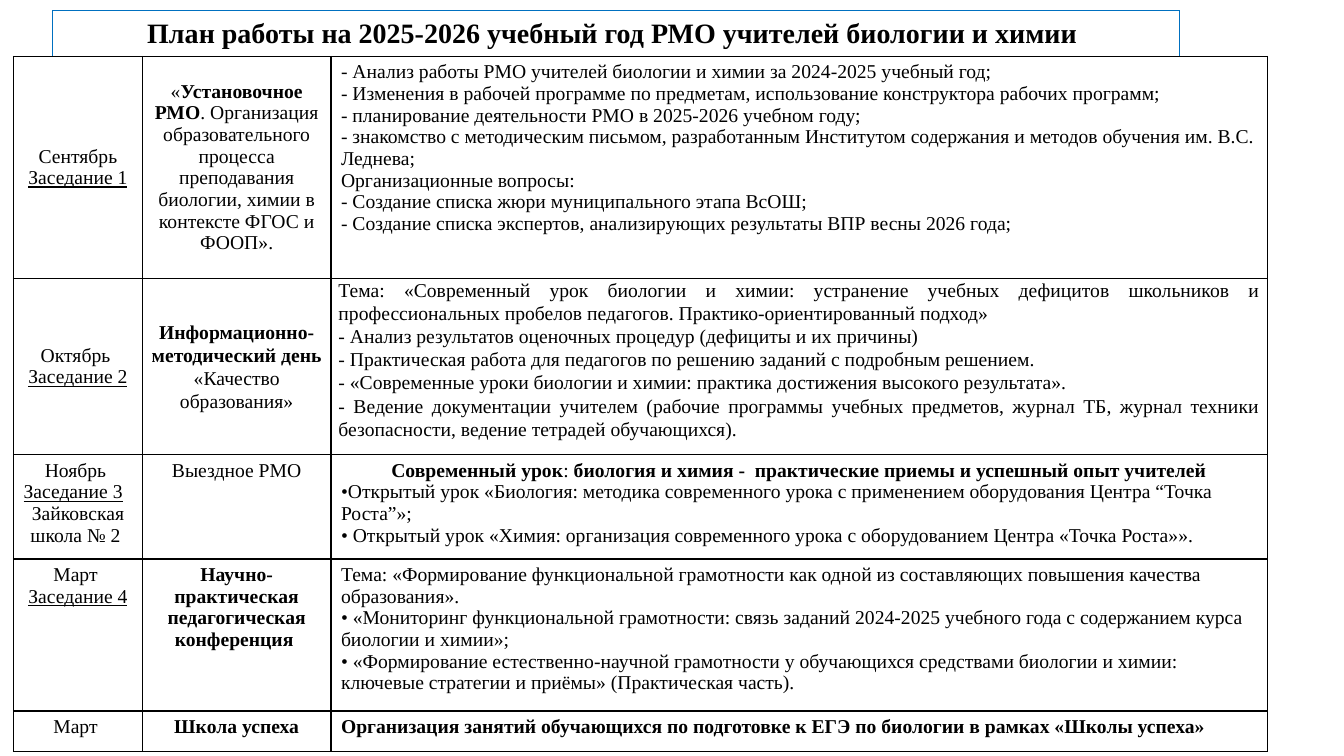
from dataclasses import dataclass

from lxml.etree import SubElement
from pptx import Presentation
from pptx.dml.color import RGBColor
from pptx.enum.text import MSO_ANCHOR as Anchor, MSO_AUTO_SIZE as AutoSize, PP_ALIGN as Align
from pptx.oxml.ns import qn
from pptx.util import Cm, Pt

FONT = "Times New Roman"
BLACK, WHITE, BLUE = "000000", "FFFFFF", "0070C0"
COLUMN_WIDTHS = (3.25, 4.75, 23.6)
ROW_HEIGHTS = (5.59, 4.45, 2.62, 3.83, 1.02)


@dataclass
class Run:
    text: str
    bold: bool = False
    underline: bool = False


@dataclass
class Line:
    runs: list[Run]
    align: Align = Align.LEFT


@dataclass
class Entry:
    lines: list[Line]
    anchor: Anchor = Anchor.TOP
    tight: bool = False


def color(value: str) -> RGBColor:
    return RGBColor.from_string(value)


def bold(text: str) -> Run:
    return Run(text, bold=True)


def meeting(number: int) -> Run:
    return Run(f"Заседание {number}", underline=True)


def lines(*texts: str, align: Align = Align.LEFT) -> list[Line]:
    return [Line([Run(text)], align) for text in texts]


def centered(*runs: Run) -> Line:
    return Line(list(runs), Align.CENTER)


PLAN = [
    [
        Entry([centered(Run("Сентябрь")), centered(meeting(1))], Anchor.MIDDLE),
        Entry([
            centered(Run("«"), bold("Установочное РМО"),
                     Run(". Организация образовательного процесса преподавания")),
            centered(Run("биологии, химии в контексте ФГОС и ФООП».")),
        ], Anchor.MIDDLE),
        Entry(lines(
            "- Анализ работы РМО учителей биологии и химии за 2024-2025 учебный год;",
            "- Изменения в рабочей программе по предметам, использование конструктора рабочих программ;",
            "- планирование деятельности РМО в 2025-2026 учебном году;",
            "- знакомство с методическим письмом, разработанным Институтом содержания и методов "
            "обучения им. В.С. Леднева;",
            "Организационные вопросы:",
            "- Создание списка жюри муниципального этапа ВсОШ;",
            "- Создание списка экспертов, анализирующих результаты ВПР весны 2026 года;",
        )),
    ],
    [
        Entry([centered(Run("Октябрь ")), centered(meeting(2))], Anchor.MIDDLE),
        Entry([centered(bold("Информационно-методический день "), Run("«Качество образования»"))],
              Anchor.MIDDLE, tight=True),
        Entry(lines(
            "Тема: «Современный урок биологии и химии: устранение учебных дефицитов школьников и "
            "профессиональных пробелов педагогов. Практико-ориентированный подход»",
            "- Анализ результатов оценочных процедур (дефициты и их причины)",
            "- Практическая работа для педагогов по решению заданий с подробным решением. ",
            "- «Современные уроки биологии и химии: практика достижения высокого результата». ",
            "- Ведение документации учителем (рабочие программы учебных предметов, журнал ТБ, "
            "журнал техники безопасности, ведение тетрадей обучающихся).",
            align=Align.JUSTIFY,
        ), tight=True),
    ],
    [
        Entry([centered(Run("Ноябрь ")), Line([meeting(3)]),
               centered(Run("Зайковская школа № 2 "))]),
        Entry([centered(Run("Выездное РМО"))]),
        Entry([
            centered(bold("Современный урок"), Run(": "),
                     bold("биология и химия -  практические приемы и успешный опыт учителей")),
            *lines(
                "•Открытый урок «Биология: методика современного урока с применением оборудования "
                "Центра “Точка Роста”»;",
                "• Открытый урок «Химия: организация современного урока с оборудованием Центра "
                "«Точка Роста»».",
            ),
        ]),
    ],
    [
        Entry([centered(Run("Март ")), centered(meeting(4))]),
        Entry([centered(bold("Научно-практическая педагогическая конференция "))]),
        Entry(lines(
            "Тема: «Формирование функциональной грамотности как одной из составляющих повышения "
            "качества образования».",
            "• «Мониторинг функциональной грамотности: связь заданий 2024-2025 учебного года с "
            "содержанием курса биологии и химии»;",
            "• «Формирование естественно-научной грамотности у обучающихся средствами биологии и "
            "химии: ключевые стратегии и приёмы» (Практическая часть).",
        )),
    ],
    [
        Entry([centered(Run("Март "))]),
        Entry([centered(bold("Школа успеха"))]),
        Entry([Line([bold("Организация занятий обучающихся по подготовке к ЕГЭ по биологии "
                          "в рамках «Школы успеха»")])]),
    ],
]


def add_text(paragraph, text: str, *, size: float = 14, bold: bool = False,
             underline: bool = False) -> None:
    run = paragraph.add_run()
    run.text = text
    font = run.font
    font.name, font.size = FONT, Pt(size)
    font.bold, font.underline = bold, underline
    font.color.rgb = color(BLACK)


def add_borders(cell) -> None:
    properties = cell._tc.get_or_add_tcPr()
    for side in ("a:lnL", "a:lnR", "a:lnT", "a:lnB"):
        border = SubElement(properties, qn(side), w=str(Pt(1)))
        fill = SubElement(border, qn("a:solidFill"))
        SubElement(fill, qn("a:srgbClr"), val=BLACK)


def fill_cell(cell, entry: Entry) -> None:
    add_borders(cell)
    cell.fill.solid()
    cell.fill.fore_color.rgb = color(WHITE)
    cell.vertical_anchor = entry.anchor
    if entry.tight:
        cell.margin_left = cell.margin_right = Cm(0.19)
        cell.margin_top = cell.margin_bottom = Cm(0)
    frame = cell.text_frame
    for index, line in enumerate(entry.lines):
        paragraph = frame.add_paragraph() if index else frame.paragraphs[0]
        paragraph.alignment = line.align
        if entry.tight:
            paragraph.line_spacing = 1.07
        for run in line.runs:
            add_text(paragraph, run.text, bold=run.bold, underline=run.underline)


def add_title(slide) -> None:
    title = slide.shapes.title
    title.left, title.top, title.width, title.height = Cm(1.32), Cm(0.26), Cm(28.4), Cm(1.11)
    title.line.color.rgb = color(BLUE)
    title.line.width = Pt(0)
    frame = title.text_frame
    frame.word_wrap = True
    frame.auto_size = AutoSize.SHAPE_TO_FIT_TEXT
    frame.vertical_anchor = Anchor.TOP
    paragraph = frame.paragraphs[0]
    paragraph.alignment = Align.CENTER
    add_text(paragraph, "План работы на 2025-2026 учебный год РМО учителей биологии и химии ",
             size=20, bold=True)


def add_plan(slide) -> None:
    table = slide.shapes.add_table(
        len(ROW_HEIGHTS), len(COLUMN_WIDTHS), Cm(0.34), Cm(1.42),
        Cm(sum(COLUMN_WIDTHS)), Cm(sum(ROW_HEIGHTS))).table
    table.first_row = table.horz_banding = False
    for column, width in zip(table.columns, COLUMN_WIDTHS):
        column.width = Cm(width)
    for row, height, entries in zip(table.rows, ROW_HEIGHTS, PLAN):
        row.height = Cm(height)
        for cell, entry in zip(row.cells, entries):
            fill_cell(cell, entry)


def main() -> None:
    presentation = Presentation()
    presentation.slide_width, presentation.slide_height = Cm(33.87), Cm(19.05)
    slide = presentation.slides.add_slide(presentation.slide_layouts[5])
    add_title(slide)
    add_plan(slide)
    presentation.save("out.pptx")


if __name__ == "__main__":
    main()
